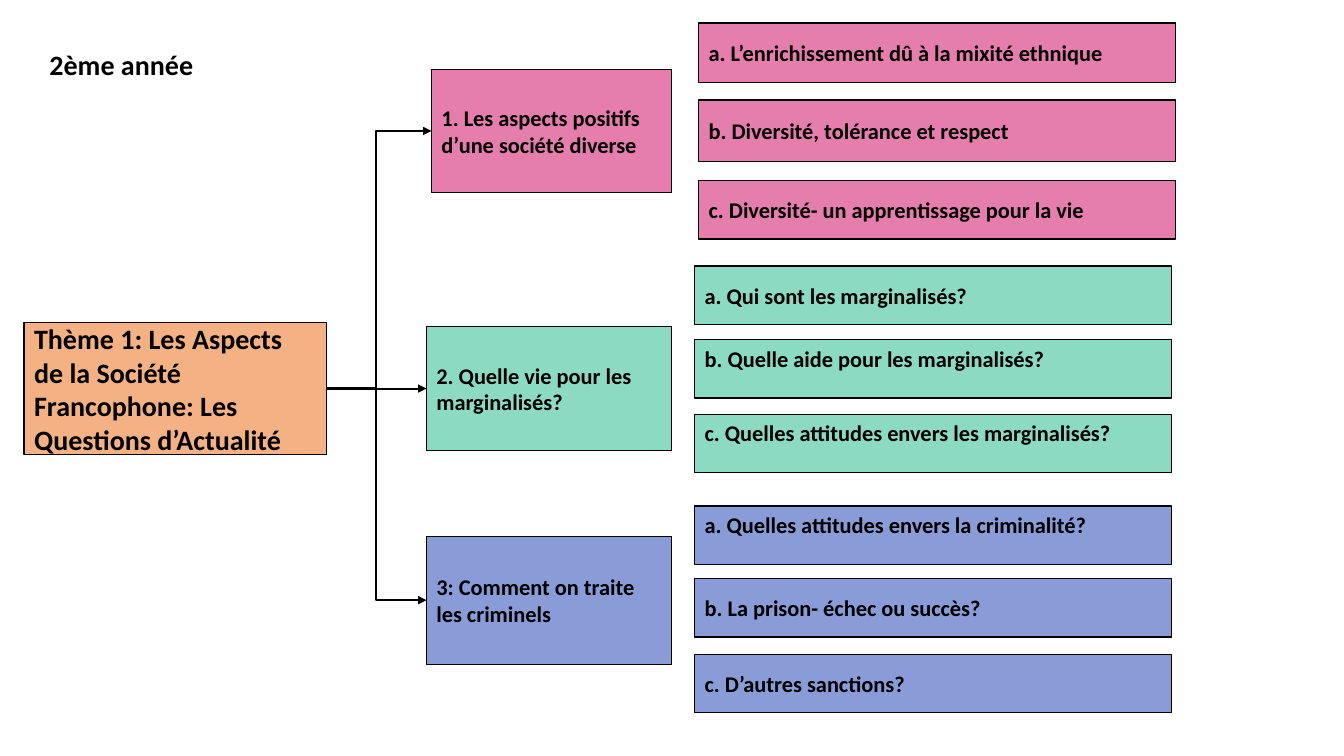
from pptx import Presentation
from pptx.dml.color import RGBColor
from pptx.enum import shapes, text
from pptx.oxml.ns import qn
from pptx.util import Inches, Pt
from lxml import etree

BLACK = "000000"
PINK, GREEN, BLUE, ORANGE = "E67EAD", "8CDAC2", "899CD7", "F4B183"
LEFT, RIGHT = 1, 3
TRUNK_X = 3.73
MIDDLE, TOP = text.MSO_ANCHOR.MIDDLE, text.MSO_ANCHOR.TOP

TOPICS = [
    ("1. Les aspects positifs d’une société diverse", PINK, (4.28, 0.69, 2.38, 1.22), 6.93, [
        ("a. L’enrichissement dû à la mixité ethnique", 0.23, 0.59, MIDDLE),
        ("b. Diversité, tolérance et respect", 0.99, 0.61, MIDDLE),
        ("c. Diversité- un apprentissage pour la vie", 1.79, 0.58, MIDDLE),
    ]),
    ("2. Quelle vie pour les marginalisés?", GREEN, (4.23, 3.24, 2.43, 1.23), 6.89, [
        ("a. Qui sont les marginalisés?", 2.64, 0.58, MIDDLE),
        ("b. Quelle aide pour les marginalisés?", 3.37, 0.58, TOP),
        ("c. Quelles attitudes envers les marginalisés?", 4.11, 0.58, TOP),
    ]),
    ("3: Comment on traite les criminels", BLUE, (4.23, 5.32, 2.43, 1.27), 6.89, [
        ("a. Quelles attitudes envers la criminalité?", 5.02, 0.58, TOP),
        ("b. La prison- échec ou succès?", 5.74, 0.58, MIDDLE),
        ("c. D’autres sanctions?", 6.49, 0.58, MIDDLE),
    ]),
]


def rgb(colour):
    """Turn a hex string into a colour."""
    return RGBColor.from_string(colour)


def write(shape, words, size, anchor=MIDDLE):
    """Put bold, black, left-aligned words in a shape."""
    frame = shape.text_frame
    frame.text = words
    frame.word_wrap = True
    frame.vertical_anchor = anchor
    paragraph = frame.paragraphs[0]
    paragraph.alignment = text.PP_ALIGN.LEFT
    paragraph.font.name = "Calibri"
    paragraph.font.size = Pt(size)
    paragraph.font.bold = True
    paragraph.font.color.rgb = rgb(BLACK)


def add_box(slide, words, place, fill, size=16, anchor=MIDDLE):
    """Add a filled, outlined box with its words."""
    box = slide.shapes.add_shape(shapes.MSO_SHAPE.RECTANGLE, *map(Inches, place))
    box.shadow.inherit = False
    box.fill.solid()
    box.fill.fore_color.rgb = rgb(fill)
    box.line.color.rgb = rgb(BLACK)
    box.line.width = Pt(1)
    write(box, words, size, anchor)
    return box


def add_branch(slide, theme, topic, straight):
    """Join the theme to a topic with an arrow that bends at the trunk."""
    kind = shapes.MSO_CONNECTOR.STRAIGHT if straight else shapes.MSO_CONNECTOR.ELBOW
    branch = slide.shapes.add_connector(kind, 0, 0, 0, 0)
    branch.begin_connect(theme, RIGHT)
    branch.end_connect(topic, LEFT)
    branch.line.color.rgb = rgb(BLACK)
    branch.line.width = Pt(1.5)
    properties = branch._element.spPr
    etree.SubElement(properties.find(qn("a:ln")), qn("a:tailEnd"), type="triangle")
    etree.SubElement(properties, qn("a:effectLst"))
    if not straight:
        bend = (Inches(TRUNK_X) - branch.begin_x) / (branch.end_x - branch.begin_x)
        adjustments = properties.find(qn("a:prstGeom")).find(qn("a:avLst"))
        etree.SubElement(adjustments, qn("a:gd"), name="adj1", fmla=f"val {round(bend * 100000)}")


def add_heading(slide, words):
    """Place and format the slide title."""
    heading = slide.shapes.title
    heading.left, heading.top, heading.width, heading.height = map(Inches, (0.39, 0.42, 1.8, 0.44))
    write(heading, words, 20)


def main():
    """Build the theme map and save it."""
    deck = Presentation()
    deck.slide_width, deck.slide_height = Inches(13.33), Inches(7.5)
    slide = deck.slides.add_slide(deck.slide_layouts[5])
    add_heading(slide, "2ème année")
    theme = add_box(
        slide, "Thème 1: Les Aspects de la Société Francophone: Les Questions d’Actualité",
        (0.24, 3.2, 3, 1.31), ORANGE, 20)
    for number, (words, colour, place, left, subtopics) in enumerate(TOPICS, 1):
        topic = add_box(slide, words, place, colour)
        add_branch(slide, theme, topic, straight=number == 2)
        for subtopic, top, height, anchor in subtopics:
            add_box(slide, subtopic, (left, top, 4.73, height), colour, anchor=anchor)
    deck.save("out.pptx")


if __name__ == "__main__":
    main()
